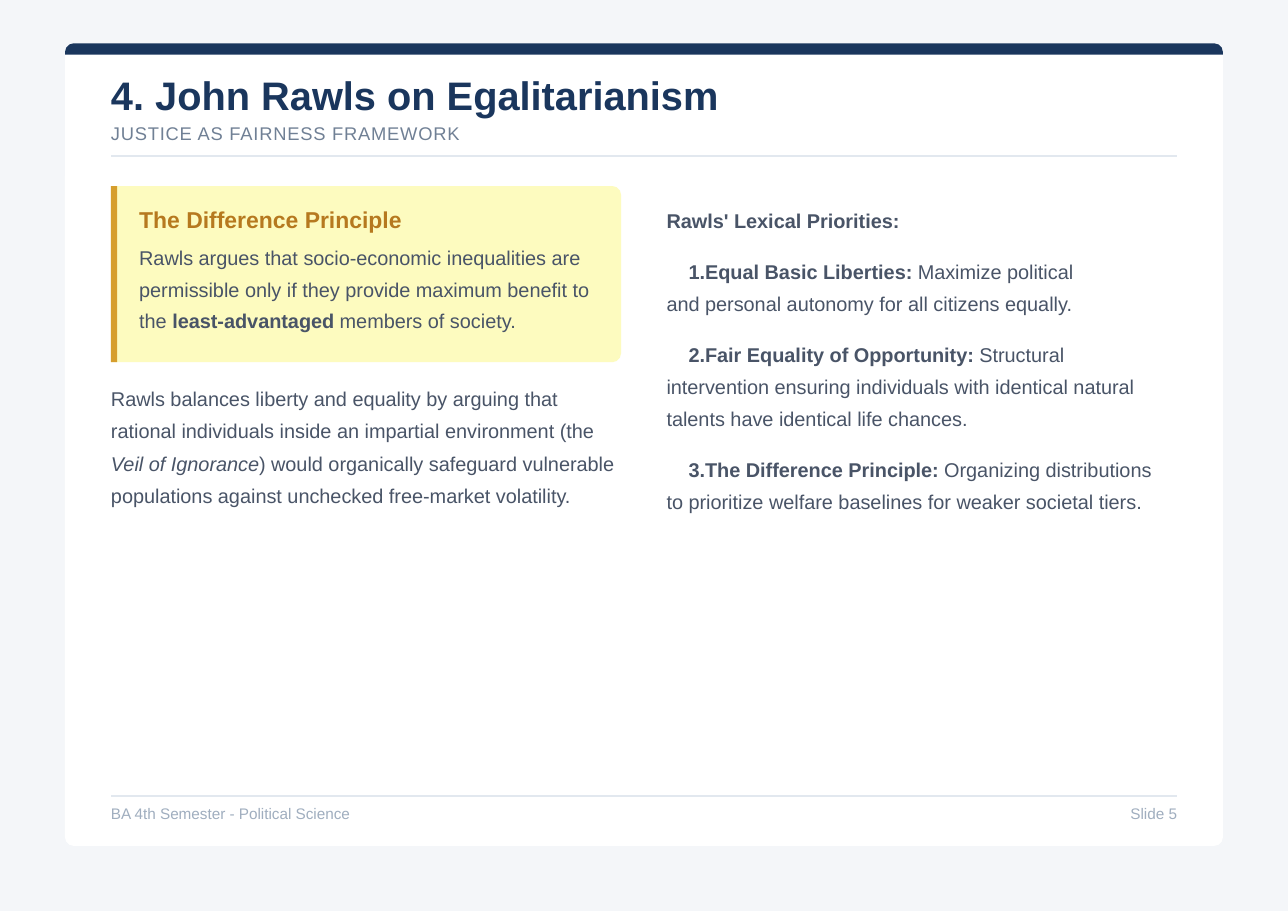
import dataclasses

import pptx
import pptx.dml.color
import pptx.enum.shapes
import pptx.enum.text
import pptx.oxml.ns
import pptx.util
from lxml import etree

Cm = pptx.util.Cm
Pt = pptx.util.Pt
SHAPE = pptx.enum.shapes.MSO_SHAPE
ALIGN = pptx.enum.text.PP_ALIGN


@dataclasses.dataclass(frozen=True)
class Theme:
    font: str = "Arial"
    page: str = "F4F6F9"
    card: str = "FFFFFF"
    navy: str = "1A365D"
    rule: str = "E2E8EF"
    callout: str = "FDFBBF"
    accent: str = "D69E2D"
    callout_heading: str = "B6791F"
    subtitle: str = "708095"
    body: str = "495467"
    footer: str = "A0AEBF"
    title_size: float = 26
    subtitle_size: float = 12
    heading_size: float = 15
    body_size: float = 13
    footer_size: float = 10
    radius: float = 0.2


THEME = Theme()


@dataclasses.dataclass(frozen=True)
class Box:
    """A region in centimetres."""
    left: float
    top: float
    width: float
    height: float

    def lengths(self):
        return [Cm(value) for value in (self.left, self.top, self.width, self.height)]


def rgb(color):
    return pptx.dml.color.RGBColor.from_string(color)


def add_panel(slide, box, color, preset=SHAPE.RECTANGLE, corners=()):
    panel = slide.shapes.add_shape(preset, *box.lengths())
    panel.shadow.inherit = False
    panel.fill.solid()
    panel.fill.fore_color.rgb = rgb(color)
    panel.line.fill.background()
    for index, radius in enumerate(corners):
        panel.adjustments[index] = radius / min(box.width, box.height)
    return panel


def add_rule(slide, left, top, width, weight):
    rule = slide.shapes.add_connector(
        pptx.enum.shapes.MSO_CONNECTOR.STRAIGHT,
        Cm(left), Cm(top), Cm(left + width), Cm(top))
    rule.line.color.rgb = rgb(THEME.rule)
    rule.line.width = Pt(weight)
    properties = rule._element.spPr
    etree.SubElement(properties, pptx.oxml.ns.qn("a:effectLst"))


def add_text_frame(slide, box):
    frame = slide.shapes.add_textbox(*box.lengths()).text_frame
    frame.word_wrap = True
    frame.margin_left = frame.margin_top = frame.margin_right = frame.margin_bottom = 0
    return frame


def write(paragraph, phrases, size, color, pitch=None, before=None):
    """Fill a paragraph with (text, style) phrases; a vertical tab breaks the line."""
    for text, style in phrases:
        for index, line in enumerate(text.split("\v")):
            if index:
                paragraph.add_line_break()
            run = paragraph.add_run()
            run.text = line
            run.font.name = THEME.font
            run.font.size = Pt(size)
            run.font.color.rgb = rgb(color)
            run.font.bold = style == "bold"
            run.font.italic = style == "italic"
    if pitch:
        paragraph.line_spacing = Pt(pitch)
    if before:
        paragraph.space_before = Pt(before)


def number(paragraph):
    properties = paragraph._p.get_or_add_pPr()
    properties.set("marL", "0")
    properties.set("indent", str(Cm(0.51)))
    etree.SubElement(properties, pptx.oxml.ns.qn("a:buAutoNum"), type="arabicPeriod")


def draw_card(slide, box):
    bar = 0.26
    add_panel(slide, Box(box.left, box.top, box.width, 2 * bar), THEME.navy,
              SHAPE.ROUND_2_SAME_RECTANGLE, (THEME.radius, 0))
    add_panel(slide, Box(box.left, box.top + bar, box.width, box.height - bar),
              THEME.card, SHAPE.ROUND_2_SAME_RECTANGLE, (0, THEME.radius))


def draw_header(slide, box, title, subtitle):
    frame = add_text_frame(slide, box)
    write(frame.paragraphs[0], [(title, "bold")], THEME.title_size, THEME.navy)
    tagline = frame.add_paragraph()
    write(tagline, [(subtitle, "")], THEME.subtitle_size, THEME.subtitle, before=2)
    for run in tagline.runs:
        run._r.get_or_add_rPr().set("spc", "50")
    add_rule(slide, box.left, box.top + box.height, box.width, 1.5)


def draw_callout(slide, box, heading, phrases):
    # The preset rounds its top corners, so a quarter turn rounds the right side.
    shift = (box.width - box.height) / 2
    upright = Box(box.left + shift, box.top - shift, box.height, box.width)
    add_panel(slide, upright, THEME.callout, SHAPE.ROUND_2_SAME_RECTANGLE,
              (THEME.radius, 0)).rotation = 90
    add_panel(slide, Box(box.left, box.top, 0.14, box.height), THEME.accent)
    frame = add_text_frame(
        slide, Box(box.left + 0.65, box.top + 0.44, box.width - 0.8, box.height - 0.8))
    write(frame.paragraphs[0], [(heading, "bold")],
          THEME.heading_size, THEME.callout_heading)
    write(frame.add_paragraph(), phrases, THEME.body_size, THEME.body, 20.6, 3.6)


def draw_argument(slide, box, phrases):
    frame = add_text_frame(slide, box)
    write(frame.paragraphs[0], phrases, THEME.body_size, THEME.body, 21.1)


def draw_priorities(slide, box, heading, priorities):
    frame = add_text_frame(slide, box)
    write(frame.paragraphs[0], [(heading, "bold")], THEME.body_size, THEME.body)
    for name, meaning in priorities:
        priority = frame.add_paragraph()
        number(priority)
        write(priority, [(name + ": ", "bold"), (meaning, "")],
              THEME.body_size, THEME.body, 20.9, 12.5)


def draw_footer(slide, box, course, page):
    add_rule(slide, box.left, box.top, box.width, 0.75)
    half = box.width / 2
    for column, (text, align) in enumerate(((course, ALIGN.LEFT), (page, ALIGN.RIGHT))):
        frame = add_text_frame(
            slide, Box(box.left + column * half, box.top + 0.2, half, box.height - 0.2))
        write(frame.paragraphs[0], [(text, "")], THEME.footer_size, THEME.footer)
        frame.paragraphs[0].alignment = align


def main():
    deck = pptx.Presentation()
    deck.slide_width, deck.slide_height = Cm(29.7), Cm(21)
    slide = deck.slides.add_slide(deck.slide_layouts[6])
    slide.background.fill.solid()
    slide.background.fill.fore_color.rgb = rgb(THEME.page)

    left, width = 2.56, 24.58
    draw_card(slide, Box(1.5, 1, 26.7, 18.5))
    draw_header(slide, Box(left, 1.64, width, 1.96),
                "4. John Rawls on Egalitarianism", "JUSTICE AS FAIRNESS FRAMEWORK")
    draw_callout(slide, Box(left, 4.29, 11.76, 4.06), "The Difference Principle", [
        ("Rawls argues that socio-economic inequalities are permissible only if "
         "they provide maximum benefit to the ", ""),
        ("least-advantaged", "bold"),
        (" members of society.", "")])
    draw_argument(slide, Box(left, 8.72, 11.75, 3), [
        ("Rawls balances liberty and equality by arguing that rational individuals "
         "inside an impartial environment (the ", ""),
        ("Veil of Ignorance", "italic"),
        (") would organically safeguard vulnerable populations against unchecked "
         "free-market volatility.", "")])
    draw_priorities(slide, Box(15.37, 4.8, 11.4, 7.1), "Rawls' Lexical Priorities:", [
        ("Equal Basic Liberties",
         "Maximize political\vand personal autonomy for all citizens equally."),
        ("Fair Equality of Opportunity",
         "Structural intervention ensuring individuals with identical natural "
         "talents have identical life chances."),
        ("The Difference Principle",
         "Organizing distributions to prioritize welfare baselines for weaker "
         "societal tiers.")])
    draw_footer(slide, Box(left, 18.35, width, 0.65),
                "BA 4th Semester - Political Science", "Slide 5")
    deck.save("out.pptx")


if __name__ == "__main__":
    main()
